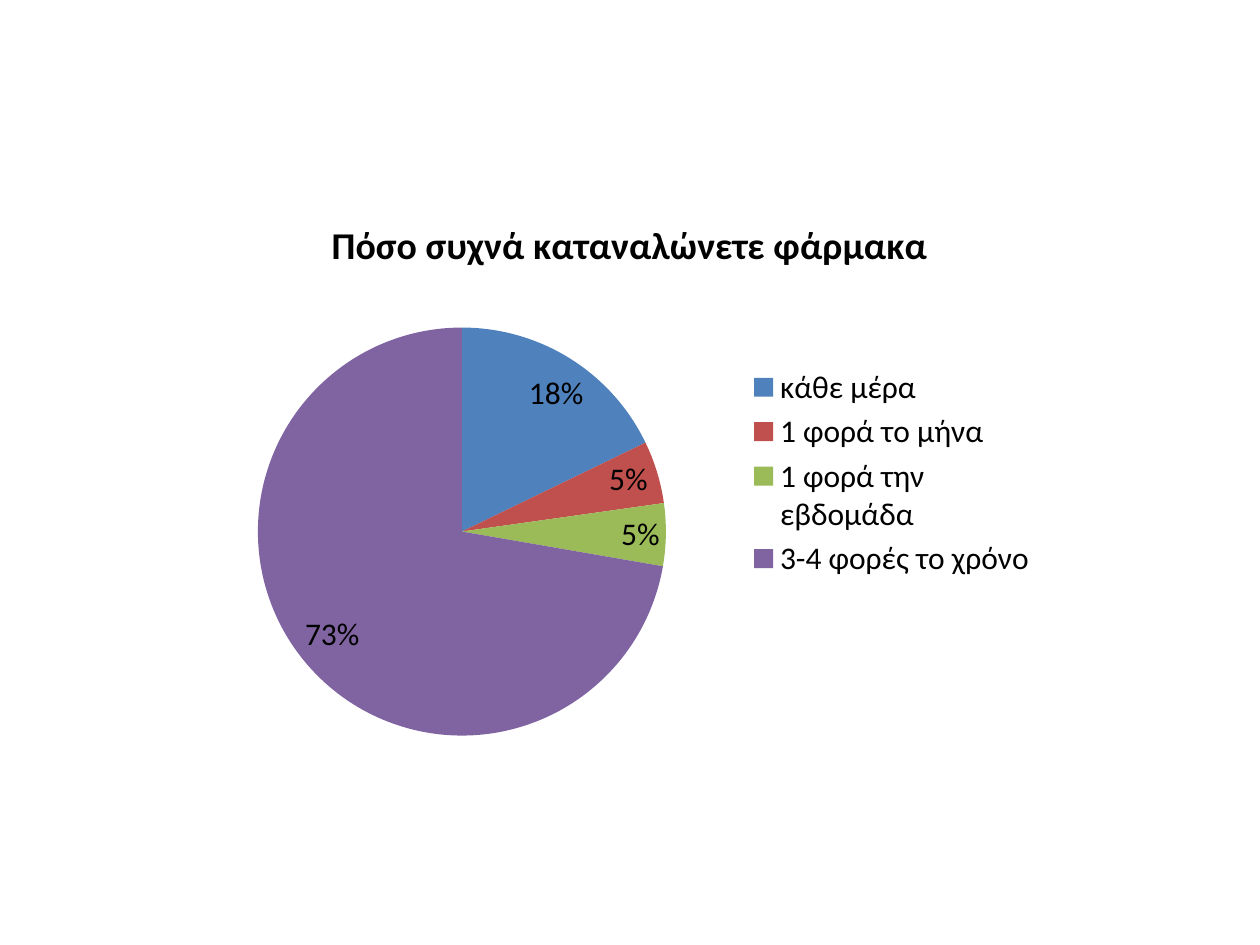
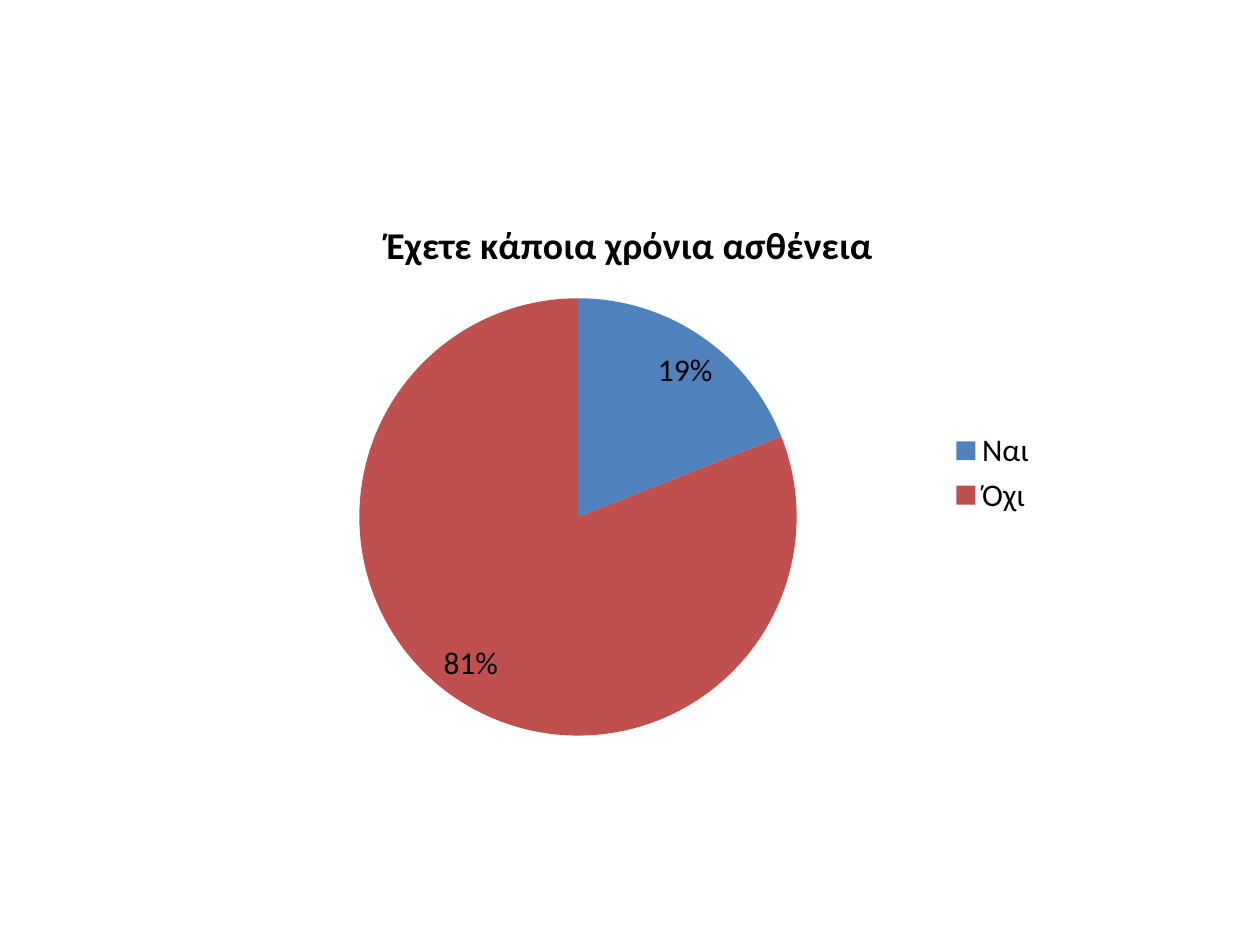
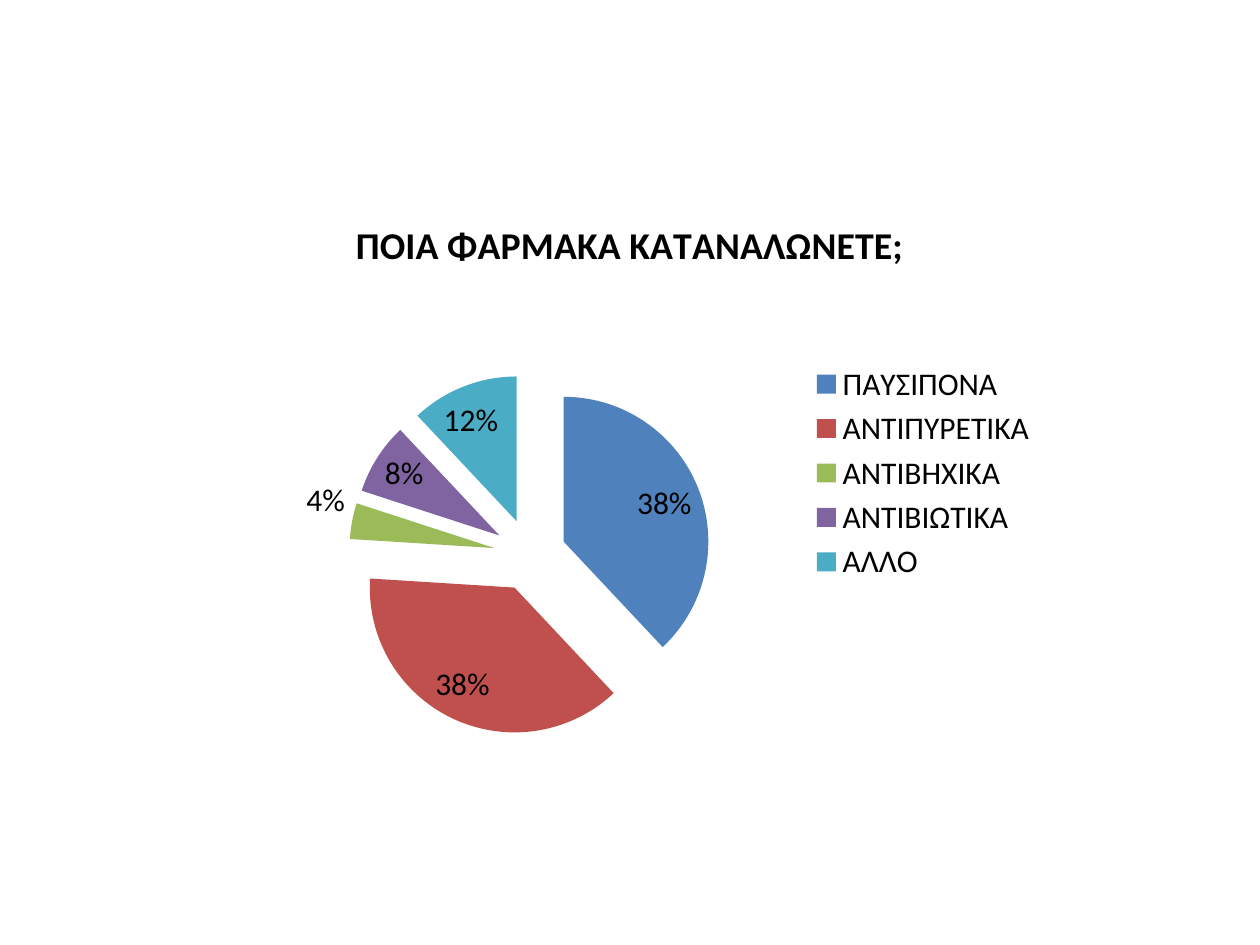
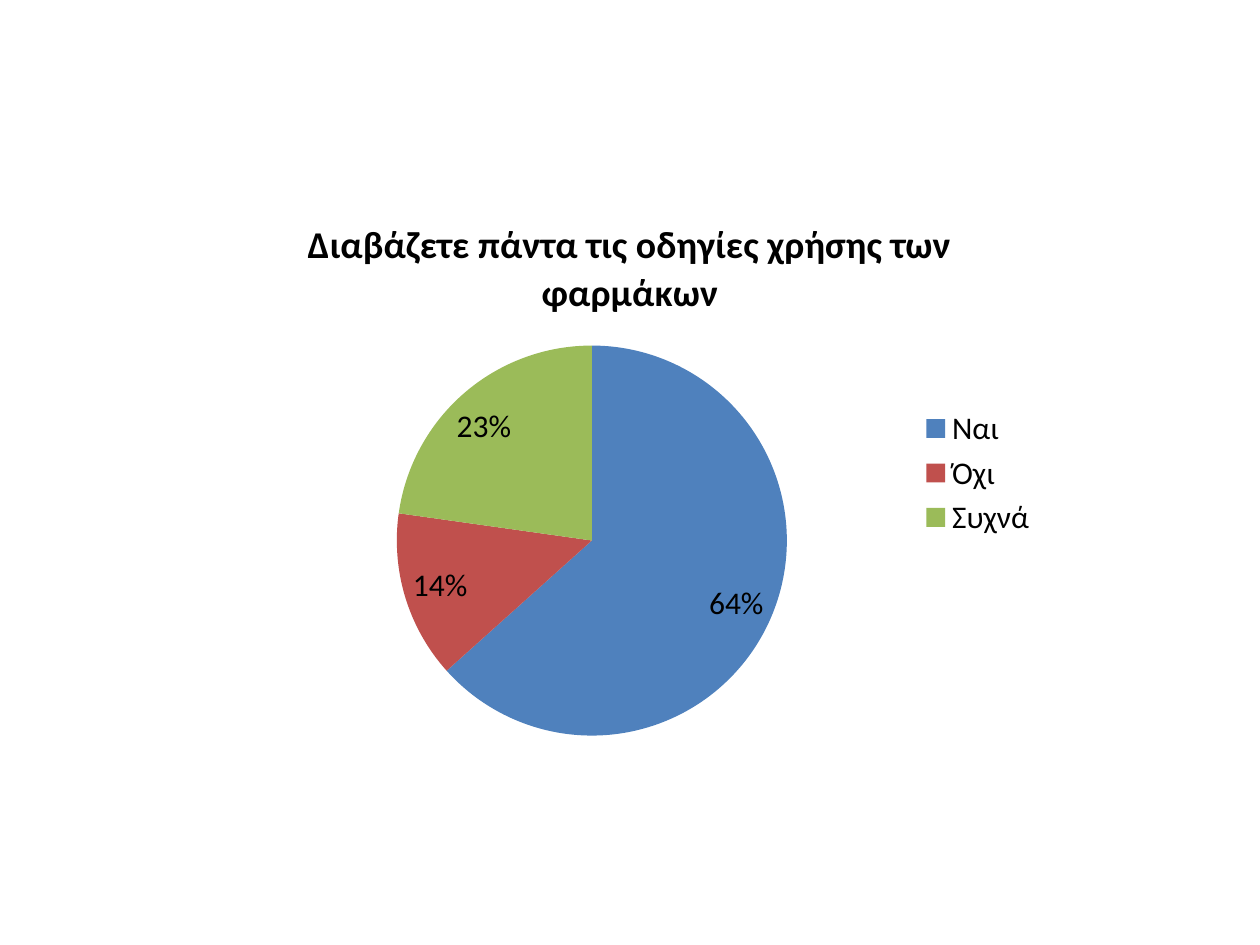
from dataclasses import dataclass

from lxml import etree
from pptx import Presentation
from pptx.chart.data import CategoryChartData
from pptx.dml.color import RGBColor
from pptx.enum.chart import XL_CHART_TYPE, XL_LABEL_POSITION, XL_LEGEND_POSITION
from pptx.oxml.ns import qn
from pptx.util import Pt

PIE = XL_CHART_TYPE.PIE
BEST_FIT = XL_LABEL_POSITION.BEST_FIT
RIGHT = XL_LEGEND_POSITION.RIGHT

EMU_PER_PX = 914400 // 126
SLIDE_W, SLIDE_H = 1260, 945
CHART_X, CHART_Y, CHART_W, CHART_H = 210, 193, 840, 560


@dataclass(frozen=True)
class Theme:
    font: str = "Calibri"
    text: str = "000000"
    background: str = "FFFFFF"
    slices: tuple = ("4F81BD", "C0504D", "9BBB59", "8064A2", "4BACC6")
    body_size: float = 18
    title_size: float = 21.6


THEME = Theme()


def px(n):
    return n * EMU_PER_PX


def rgb(value):
    return RGBColor.from_string(value)


def style_font(font, size, bold=False):
    font.name = THEME.font
    font.size = Pt(size)
    font.bold = bold
    font.color.rgb = rgb(THEME.text)


def add_slide(prs):
    s = prs.slides.add_slide(prs.slide_layouts[6])
    s.background.fill.solid()
    s.background.fill.fore_color.rgb = rgb(THEME.background)
    return s


def set_title(chart, text):
    title = chart.chart_title
    title.include_in_layout = False
    r = title.text_frame.paragraphs[0].add_run()
    r.text = text
    style_font(r.font, THEME.title_size, bold=True)


def set_legend(chart):
    chart.has_legend = True
    chart.legend.position = RIGHT
    chart.legend.include_in_layout = False


def set_labels(plot):
    plot.has_data_labels = True
    labels = plot.data_labels
    labels.show_value = True
    labels.number_format = '0"%"'
    labels.number_format_is_linked = False
    labels.position = BEST_FIT
    style_font(labels.font, THEME.body_size)


def explode_slices(series, percent):
    explosion = etree.Element(qn("c:explosion"), val=str(percent))
    series._element.find(qn("c:dPt")).addprevious(explosion)


def place_plot(chart, x, y, w, h):
    """Fix the plot area, in px from the chart's top left corner."""
    area = chart._chartSpace.find(".//" + qn("c:plotArea"))
    layout = area.find(qn("c:layout"))
    if layout is None:
        layout = etree.Element(qn("c:layout"))
        area.insert(0, layout)
    manual = etree.SubElement(layout, qn("c:manualLayout"))
    parts = {
        "layoutTarget": "inner", "xMode": "edge", "yMode": "edge",
        "x": x / CHART_W, "y": y / CHART_H, "w": w / CHART_W, "h": h / CHART_H,
    }
    for name, value in parts.items():
        etree.SubElement(manual, qn("c:" + name), val=str(value))


def add_pie(s, title, answers, series_name="Series 1", explosion=0, plot_box=None):
    data = CategoryChartData()
    data.categories = list(answers)
    data.add_series(series_name, list(answers.values()))
    frame = s.shapes.add_chart(
        PIE, px(CHART_X), px(CHART_Y), px(CHART_W), px(CHART_H), data)
    chart = frame.chart
    style_font(chart.font, THEME.body_size)
    set_title(chart, title)
    set_legend(chart)

    plot = chart.plots[0]
    plot.vary_by_categories = True
    set_labels(plot)
    series = plot.series[0]
    for i, color in enumerate(THEME.slices[:len(answers)]):
        fill = series.points[i].format.fill
        fill.solid()
        fill.fore_color.rgb = rgb(color)
    if explosion:
        explode_slices(series, explosion)
    if plot_box:
        place_plot(chart, *plot_box)


def main():
    prs = Presentation()
    prs.slide_width, prs.slide_height = px(SLIDE_W), px(SLIDE_H)

    frequency = "Πόσο συχνά καταναλώνετε φάρμακα"
    add_pie(add_slide(prs), frequency,
            {"κάθε μέρα": 18, "1 φορά το μήνα": 5,
             "1 φορά την εβδομάδα": 5, "3-4 φορές το χρόνο": 73},
            series_name=frequency)

    illness = "Έχετε κάποια χρόνια ασθένεια"
    add_pie(add_slide(prs), illness, {"Ναι": 19, "Όχι": 81}, series_name=illness)

    add_pie(add_slide(prs), "ΠΟΙΑ ΦΑΡΜΑΚΑ ΚΑΤΑΝΑΛΩΝΕΤΕ;",
            {"ΠΑΥΣΙΠΟΝΑ": 38, "ΑΝΤΙΠΥΡΕΤΙΚΑ": 38, "ΑΝΤΙΒΗΧΙΚΑ": 4,
             "ΑΝΤΙΒΙΩΤΙΚΑ": 8, "ΆΛΛΟ": 12},
            explosion=25, plot_box=(139, 181, 362, 362))

    add_pie(add_slide(prs), "Διαβάζετε πάντα τις οδηγίες χρήσης των φαρμάκων",
            {"Ναι": 64, "Όχι": 14, "Συχνά": 23})

    prs.save("out.pptx")


if __name__ == "__main__":
    main()
